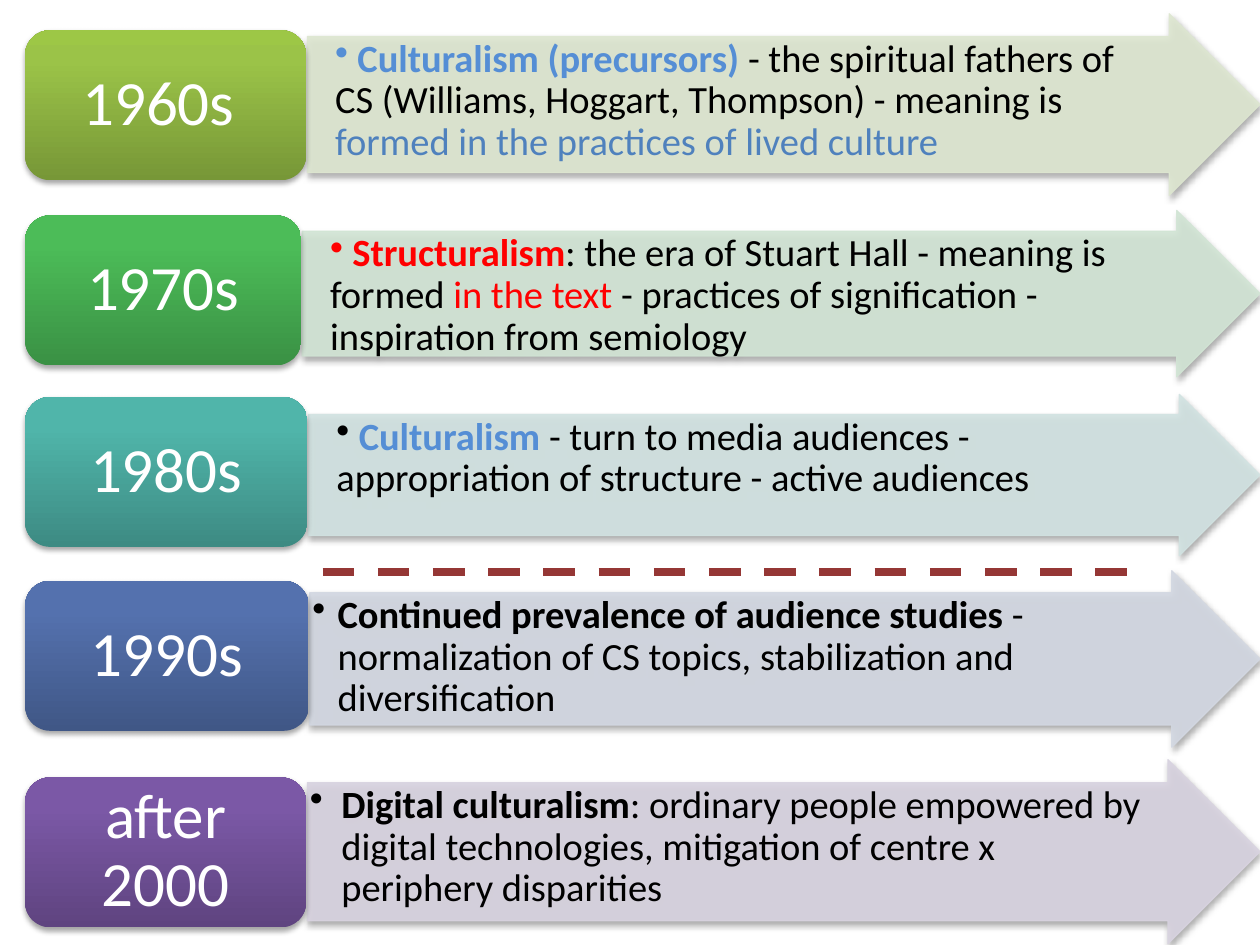
from lxml.etree import SubElement
from pptx import Presentation
from pptx.dml.color import RGBColor
from pptx.enum.dml import MSO_LINE as Dash
from pptx.enum.shapes import MSO_CONNECTOR as Link, MSO_SHAPE as Shape
from pptx.enum.text import MSO_ANCHOR as Anchor, PP_ALIGN as Align
from pptx.oxml import parse_xml
from pptx.oxml.ns import nsdecls, qn
from pptx.util import Inches, Pt

BLACK = RGBColor(0x00, 0x00, 0x00)
WHITE = RGBColor(0xFF, 0xFF, 0xFF)
SKY = RGBColor(0x55, 0x8E, 0xD5)
BLUE = RGBColor(0x4F, 0x81, 0xBD)
RED = RGBColor(0xFF, 0x00, 0x00)
BRICK = RGBColor(0x95, 0x37, 0x35)
LIME = RGBColor(0xDE, 0xE7, 0xD1)
MINT = RGBColor(0xD2, 0xE5, 0xD5)
TEAL = RGBColor(0xD2, 0xE3, 0xE2)
STEEL = RGBColor(0xD3, 0xD8, 0xE2)
LILAC = RGBColor(0xD8, 0xD3, 0xE0)

ERAS = [
    ("1960s ", 2.44, 0.11, 1.44, 0.24, LIME, ("779737", "9BC348", "9DC746"), 0.2, 0, [
        (" Culturalism (precursors) ", SKY, True),
        ("- the spiritual fathers of CS (Williams, Hoggart, Thompson) - meaning is ", BLACK, False),
        ("formed in the practices of lived culture", BLUE, False)]),
    ("1970s", 2.4, 1.67, 1.32, 1.71, MINT, ("3A9144", "4CBC58", "4ABF57"), 0.2, 0, [
        (" Structuralism", RED, True),
        (": the era of Stuart Hall - meaning is formed ", BLACK, False),
        ("in the text ", RED, False),
        ("- practices of signification - inspiration from semiology", BLACK, False)]),
    ("1980s", 2.45, 3.13, 1.28, 3.15, TEAL, ("3D8B83", "50B5AA", "4EB8AC"), 0.2, 0, [
        (" ", BLACK, True),
        ("Culturalism ", SKY, True),
        ("- turn to media audiences - appropriation of structure - active audiences", BLACK, False)]),
    ("1990s", 2.46, 4.53, 1.4, 4.61, STEEL, ("405786", "5471AE", "5271B0"), 0.2, -0.25, [
        ("Continued prevalence of audience studies ", BLACK, True),
        ("- normalization of CS topics, stabilization and diversification", BLACK, False)]),
    ("after 2000", 2.44, 6.03, 1.46, 6.17, LILAC, ("5F4480", "7B58A6", "7C57A8"), 0.25, -0.25, [
        ("Digital culturalism", BLACK, True),
        (": ordinary people empowered by digital technologies, "
         "mitigation of centre x periphery disparities", BLACK, False)]),
]


def add_card(kind, left, top, width, height, pads, anchor):
    card = slide.shapes.add_shape(kind, Inches(left), Inches(top), Inches(width), Inches(height))
    card.shadow.inherit = False
    card._element.spPr.find(qn("a:effectLst")).append(parse_xml(
        f'<a:outerShdw {nsdecls("a")} blurRad="40000" dist="23000" dir="5400000" rotWithShape="0">'
        '<a:srgbClr val="000000"><a:alpha val="35000"/></a:srgbClr></a:outerShdw>'))
    frame = card.text_frame
    frame.word_wrap = True
    frame.vertical_anchor = anchor
    frame.margin_left, frame.margin_top, frame.margin_right, frame.margin_bottom = map(Inches, pads)
    frame.paragraphs[0].line_spacing = 0.9
    return card


def style(run, size, color, bold):
    run.font.name = "Calibri"
    run.font.size = Pt(size)
    run.font.bold = bold
    run.font.color.rgb = color


deck = Presentation()
deck.slide_width, deck.slide_height = Inches(10), Inches(7.5)
slide = deck.slides.add_slide(deck.slide_layouts[6])

for label, left, top, height, box_top, tint, shades, margin, indent, parts in ERAS:
    pads = (0.02, 0.02, 0.02 + height / 4, 0.02)
    arrow = add_card(Shape.RIGHT_ARROW, left, top, 10 - left, height, pads, Anchor.TOP)
    arrow.adjustments[0] = 0.75
    arrow.adjustments[1] = 0.5
    arrow.fill.solid()
    arrow.fill.fore_color.rgb = tint
    arrow.line.color.rgb = tint
    arrow.line.width = Pt(0.75)
    for color in arrow._element.spPr.xpath("./a:solidFill/a:srgbClr | ./a:ln/a:solidFill/a:srgbClr"):
        SubElement(color, qn("a:alpha"), val="90000")
    para = arrow.text_frame.paragraphs[0]
    para.level = 1
    para.alignment = Align.LEFT
    props = para._p.get_or_add_pPr()
    props.set("marL", str(Inches(margin)))
    props.set("indent", str(Inches(indent)))
    SubElement(props, qn("a:buChar"), char="•")
    for words, color, bold in parts:
        run = para.add_run()
        run.text = words
        style(run, 22, color, bold)

    box = add_card(Shape.ROUNDED_RECTANGLE, 0.2, box_top, left - 0.21, 1.19,
                   (0.15, 0.07, 0.15, 0.07), Anchor.MIDDLE)
    stops = "".join(f'<a:gs pos="{spot}"><a:srgbClr val="{shade}"/></a:gs>'
                    for spot, shade in zip((0, 80000, 100000), shades))
    box._element.spPr.find(qn("a:prstGeom")).addnext(parse_xml(
        f'<a:gradFill {nsdecls("a")} rotWithShape="1"><a:gsLst>{stops}</a:gsLst>'
        '<a:lin ang="16200000" scaled="0"/></a:gradFill>'))
    box.line.fill.background()
    para = box.text_frame.paragraphs[0]
    para.text = label
    para.alignment = Align.CENTER
    style(para.runs[0], 36, WHITE, False)

rule = slide.shapes.add_connector(Link.STRAIGHT, Inches(2.56), Inches(4.54), Inches(9.09), Inches(4.54))
rule.line.color.rgb = BRICK
rule.line.width = Pt(4.5)
rule.line.dash_style = Dash.DASH
SubElement(rule._element.spPr, qn("a:effectLst"))

deck.save("out.pptx")
